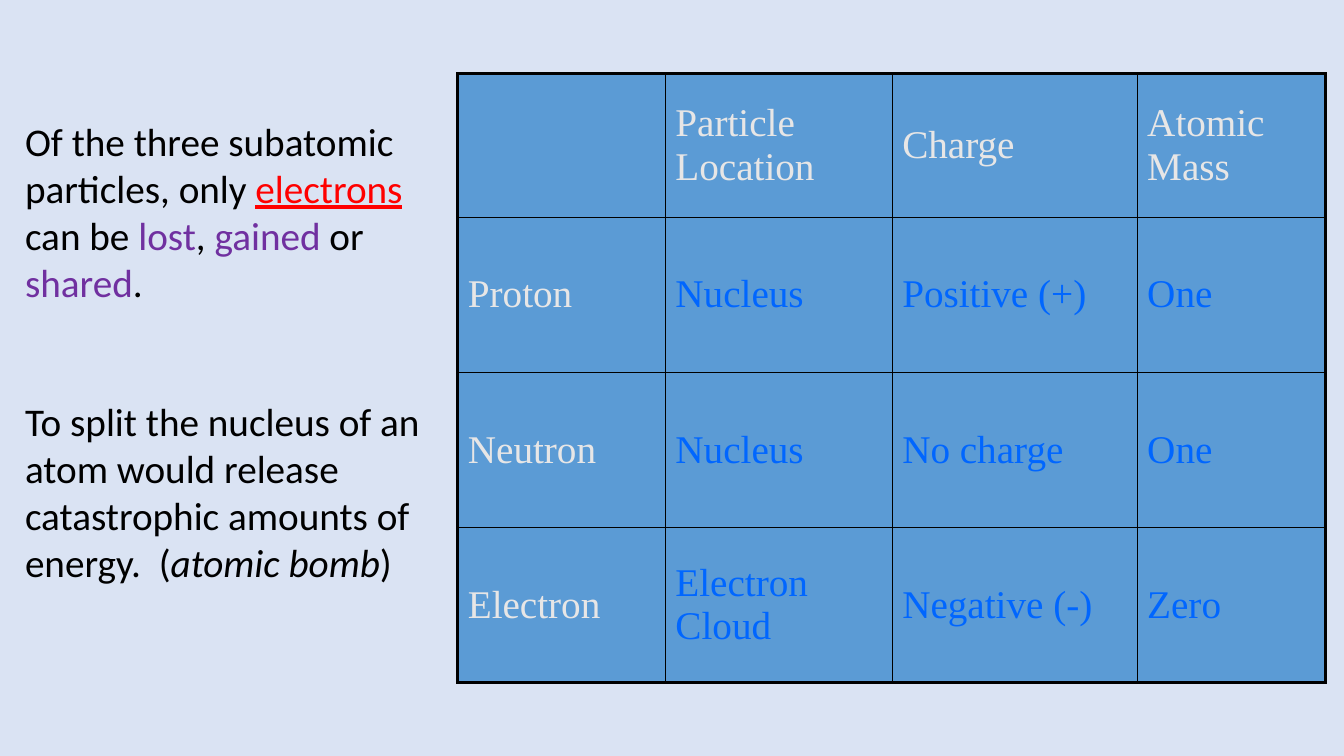
from lxml.etree import SubElement
from pptx import Presentation
from pptx.dml.color import RGBColor
from pptx.enum.text import MSO_ANCHOR as Anchor
from pptx.oxml.ns import qn
from pptx.util import Pt

COLORS = {
    "background": "DAE3F3",
    "cell": "5B9BD5",
    "border": "000000",
    "heading": "E7E6E6",
    "value": "0066FF",
    "body": "000000",
    "electrons": "FF0000",
    "action": "7030A0",
}

PARTICLES = [
    ["", "Particle Location", "Charge", "Atomic Mass"],
    ["Proton", "Nucleus", "Positive (+)", "One"],
    ["Neutron", "Nucleus", "No charge", "One"],
    ["Electron", "Electron Cloud", "Negative (-)", "Zero"],
]
COLUMN_WIDTHS = [148.3, 162, 175, 134.6]
ROW_HEIGHTS = [102.5, 110.8, 110.8, 110.8]
OUTER_LINE, INNER_LINE = 2.25, 1

# Each remark is a list of (text, format) pieces
REMARKS = [
    [
        ("Of the three subatomic particles, only ", {}),
        ("electrons", {"color": "electrons", "underline": True}),
        (" can be ", {}),
        ("lost", {"color": "action"}),
        (", ", {}),
        ("gained", {"color": "action"}),
        (" or ", {}),
        ("shared", {"color": "action"}),
        (".", {}),
    ],
    [
        ("To split the nucleus of an atom would release catastrophic "
         "amounts of energy.  (", {}),
        ("atomic bomb", {"italic": True}),
        (")", {}),
    ],
]
REMARK_GAP = 66


def rgb(name):
    return RGBColor.from_string(COLORS[name])


def add_text(paragraph, text, color="body", font="Calibri", size=28,
             italic=None, underline=None):
    run = paragraph.add_run()
    run.text = text
    run.font.name = font
    run.font.size = Pt(size)
    run.font.italic = italic
    run.font.underline = underline
    run.font.color.rgb = rgb(color)


def set_borders(cell, widths):
    """Draw the cell's sides; widths maps L, R, T, B to points."""
    properties = cell._tc.get_or_add_tcPr()
    for position, (side, width) in enumerate(widths.items()):
        line = SubElement(properties, qn(f"a:ln{side}"), w=str(Pt(width)))
        fill = SubElement(line, qn("a:solidFill"))
        SubElement(fill, qn("a:srgbClr"), val=COLORS["border"])
        properties.insert(position, line)


def add_particle_table(slide, left, top):
    row_count, column_count = len(ROW_HEIGHTS), len(COLUMN_WIDTHS)
    table = slide.shapes.add_table(
        row_count, column_count, Pt(left), Pt(top),
        Pt(sum(COLUMN_WIDTHS)), Pt(sum(ROW_HEIGHTS))).table
    table.first_row = table.horz_banding = False
    for column, width in zip(table.columns, COLUMN_WIDTHS):
        column.width = Pt(width)
    for row, height in zip(table.rows, ROW_HEIGHTS):
        row.height = Pt(height)

    for r, labels in enumerate(PARTICLES):
        for c, label in enumerate(labels):
            cell = table.cell(r, c)
            cell.vertical_anchor = Anchor.MIDDLE
            cell.fill.solid()
            cell.fill.fore_color.rgb = rgb("cell")
            on_edge = {"L": c == 0, "R": c == column_count - 1,
                       "T": r == 0, "B": r == row_count - 1}
            set_borders(cell, {side: OUTER_LINE if outer else INNER_LINE
                               for side, outer in on_edge.items()})
            if label:
                color = "heading" if r == 0 or c == 0 else "value"
                add_text(cell.text_frame.paragraphs[0], label,
                         color=color, font="Times New Roman")


def add_remarks(slide, left, top, width, height):
    frame = slide.shapes.add_textbox(
        Pt(left), Pt(top), Pt(width), Pt(height)).text_frame
    frame.word_wrap = True
    for index, pieces in enumerate(REMARKS):
        if index == 0:
            paragraph = frame.paragraphs[0]
        else:
            paragraph = frame.add_paragraph()
            paragraph.space_before = Pt(REMARK_GAP)
        for text, style in pieces:
            add_text(paragraph, text, **style)


def main():
    deck = Presentation()
    deck.slide_width, deck.slide_height = Pt(960), Pt(540)
    slide = deck.slides.add_slide(deck.slide_layouts[6])
    slide.background.fill.solid()
    slide.background.fill.fore_color.rgb = rgb("background")

    # Table of the three particles on the right
    add_particle_table(slide, left=327, top=52.6)

    # Remarks on the left
    add_remarks(slide, left=10.8, top=80, width=298, height=344)

    deck.save("out.pptx")


if __name__ == "__main__":
    main()
